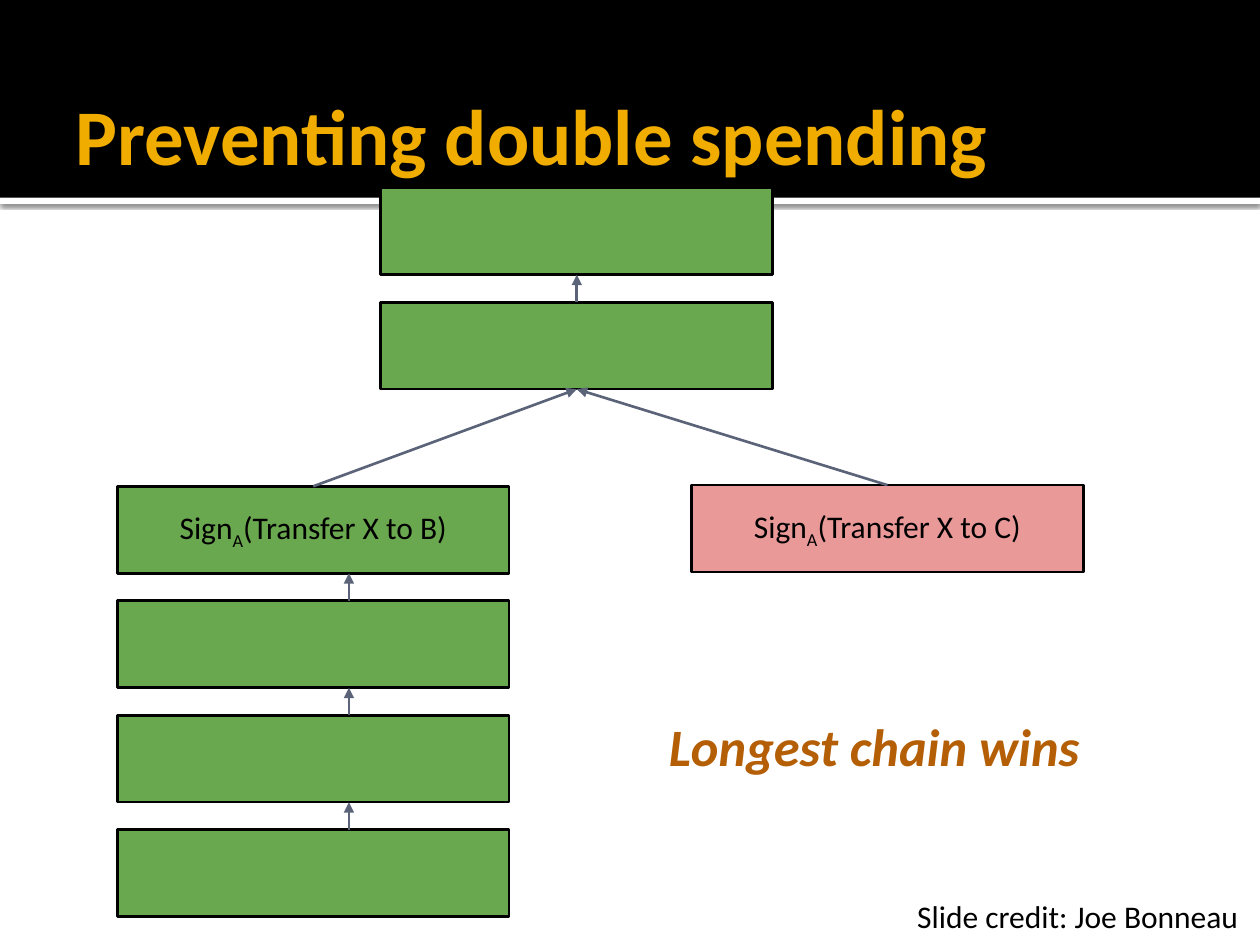
from lxml import etree
from pptx import Presentation
from pptx.dml.color import RGBColor
from pptx.enum.shapes import MSO_CONNECTOR, MSO_SHAPE
from pptx.enum.text import MSO_ANCHOR, PP_ALIGN
from pptx.oxml.ns import qn
from pptx.util import Pt

RECT, STRAIGHT = MSO_SHAPE.RECTANGLE, MSO_CONNECTOR.STRAIGHT
TOP, MIDDLE, BOTTOM = MSO_ANCHOR.TOP, MSO_ANCHOR.MIDDLE, MSO_ANCHOR.BOTTOM
LEFT, CENTER = PP_ALIGN.LEFT, PP_ALIGN.CENTER

# Content: each text is a list of (words, is subscript)
TITLE = [("Preventing double spending", False)]
CLAIM = [("Longest chain wins", False)]
CREDIT = [("Slide credit: Joe Bonneau", False)]
TRANSFER_B = [("Sign", False), ("A", True), ("(Transfer X to B)", False)]
TRANSFER_C = [("Sign", False), ("A", True), ("(Transfer X to C)", False)]

BLACK, WHITE, GREEN, PINK, SLATE = "000000", "FFFFFF", "6AA84F", "EA9999", "5A6378"
BODY_FORMAT = {"size": Pt(18), "color": BLACK}
TITLE_FORMAT = {"size": Pt(45), "color": "F0AD00", "bold": True}
CLAIM_FORMAT = {"size": Pt(30), "color": "B45F06", "bold": True, "italic": True}

# Chains of blocks: left, top, x of the arrows, fill, text of each block
BLOCK_W, BLOCK_H, PITCH = 224, 49.7, 65.4
CHAINS = {
    "shared": (217.4, 107.3, 329.6, GREEN, [None, None]),
    "winning": (67, 277.9, 199.4, GREEN, [TRANSFER_B, None, None, None]),
    "losing": (395.1, 277.2, 507.1, PINK, [TRANSFER_C]),
}

prs = Presentation()
prs.slide_width, prs.slide_height = Pt(720), Pt(540)
slide = prs.slides.add_slide(prs.slide_layouts[6])


def rgb(value):
    return RGBColor.from_string(value)


def write(shape, pieces, formats, anchor=TOP, align=LEFT, inset=7.2, wrap=True):
    frame = shape.text_frame
    settings = {"word_wrap": wrap, "vertical_anchor": anchor,
                "margin_left": Pt(7.2), "margin_right": Pt(7.2),
                "margin_top": Pt(inset), "margin_bottom": Pt(inset)}
    for name, value in settings.items():
        setattr(frame, name, value)
    paragraph = frame.paragraphs[0]
    paragraph.alignment = align
    for words, subscript in pieces:
        run = paragraph.add_run()
        run.text = words
        run.font.name = "Calibri"
        for name, value in formats.items():
            if name == "color":
                run.font.color.rgb = rgb(value)
            else:
                setattr(run.font, name, value)
        if subscript:
            run.font._element.set("baseline", "-25000")


def add_rect(left, top, width, height, fill, outline=None):
    rect = slide.shapes.add_shape(RECT, Pt(left), Pt(top), Pt(width), Pt(height))
    rect.shadow.inherit = False
    rect.fill.solid()
    rect.fill.fore_color.rgb = rgb(fill)
    if outline:
        rect.line.color.rgb = rgb(outline)
        rect.line.width = Pt(1.5)
    else:
        rect.line.fill.background()
    return rect


def add_text(left, top, width, height, pieces, formats, **layout):
    box = slide.shapes.add_textbox(Pt(left), Pt(top), Pt(width), Pt(height))
    write(box, pieces, formats, **layout)


def add_arrow(x1, y1, x2, y2):
    arrow = slide.shapes.add_connector(STRAIGHT, Pt(x1), Pt(y1), Pt(x2), Pt(y2))
    arrow.line.color.rgb = rgb(SLATE)
    arrow.line.width = Pt(1.5)
    etree.SubElement(arrow.line._get_or_add_ln(), qn("a:tailEnd"), type="triangle")
    etree.SubElement(arrow._element.spPr, qn("a:effectLst"))


def add_shadow(shape, blur, distance, opacity):
    effects = shape._element.spPr.find(qn("a:effectLst"))
    shadow = etree.SubElement(effects, qn("a:outerShdw"), blurRad=str(Pt(blur)),
                              dist=str(Pt(distance)), dir="5400000", rotWithShape="0")
    color = etree.SubElement(shadow, qn("a:srgbClr"), val=BLACK)
    etree.SubElement(color, qn("a:alpha"), val=str(opacity * 1000))


# Header band with a shadowed white rule below it
rule = add_rect(0, 113, 720, 3.6, WHITE)
add_shadow(rule, 2.5, 0.8, 60)
add_rect(0, 0, 720, 113, BLACK)
add_text(36, 12.3, 648, 98.6, TITLE, TITLE_FORMAT, anchor=BOTTOM)

# Blocks, each pointing up to the one before it
for left, top, arrow_x, fill, labels in CHAINS.values():
    for i, label in enumerate(labels):
        y = top + i * PITCH
        block = add_rect(left, y, BLOCK_W, BLOCK_H, fill, BLACK)
        if label:
            write(block, label, BODY_FORMAT, anchor=MIDDLE, align=CENTER)
        if i:
            add_arrow(arrow_x, y, arrow_x, y - PITCH + BLOCK_H)

# Fork: both branches point to the last shared block
shared_left, shared_top, fork_x, _, shared_blocks = CHAINS["shared"]
fork_y = shared_top + (len(shared_blocks) - 1) * PITCH + BLOCK_H
for branch in ("winning", "losing"):
    left, top = CHAINS[branch][:2]
    add_arrow(left + BLOCK_W / 2, top, fork_x, fork_y)

# Claim and credit
add_text(375.1, 401, 308.9, 73.4, CLAIM, CLAIM_FORMAT)
add_text(517, 509, 203, 29, CREDIT, BODY_FORMAT, inset=3.6, wrap=False)

prs.save("out.pptx")
